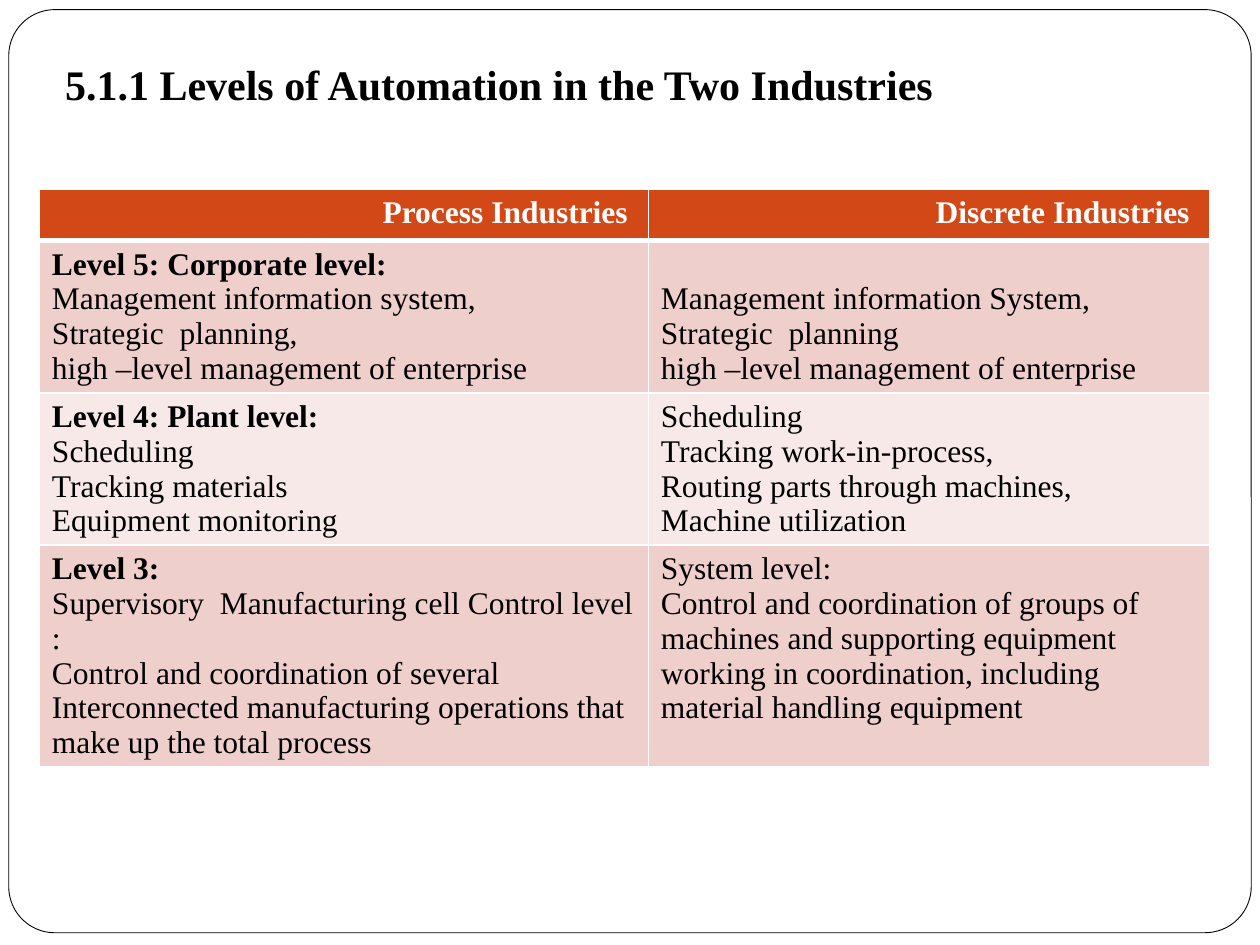
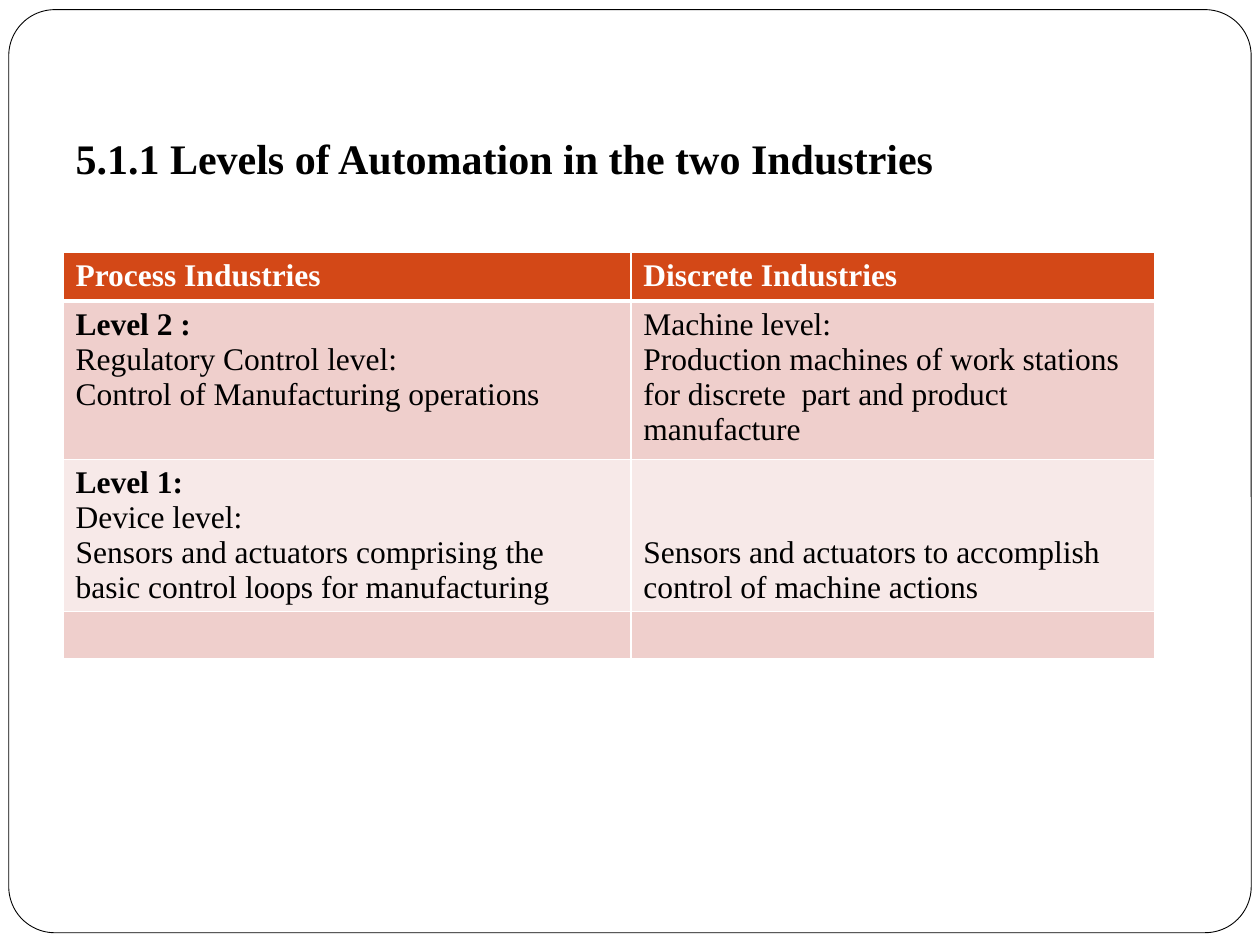
from lxml import etree
from pptx import Presentation
from pptx.dml.color import RGBColor
from pptx.enum import shapes, text
from pptx.oxml import ns
from pptx.util import Pt

COLORS = {
    "paper": "FFFFFF",
    "ink": "000000",
    "header": "D34817",
    "band_dark": "EFCFCC",
    "band_light": "F7E9E8",
}
FONT = "Times New Roman"
TITLE_SIZE = 24
TABLE_SIZE = 18
LINE_HEIGHT = 20
LEFT, RIGHT = text.PP_ALIGN.LEFT, text.PP_ALIGN.RIGHT


def color(name):
    return RGBColor.from_string(COLORS[name])


def write(paragraph, wording, size=TABLE_SIZE, ink="ink", bold=False, align=LEFT):
    paragraph.alignment = align
    run = paragraph.add_run()
    run.text = wording
    run.font.name = FONT
    run.font.size = Pt(size)
    run.font.bold = bold
    run.font.color.rgb = color(ink)


def set_borders(cell, top, bottom):
    """Draw white cell borders; top and bottom are widths in points."""
    properties = cell._tc.get_or_add_tcPr()
    for side, width in (("L", 1), ("R", 1), ("T", top), ("B", bottom)):
        line = etree.SubElement(properties, ns.qn(f"a:ln{side}"), w=str(Pt(width)))
        fill = etree.SubElement(line, ns.qn("a:solidFill"))
        etree.SubElement(fill, ns.qn("a:srgbClr"), val=COLORS["paper"])


class Deck:
    def __init__(self):
        self.presentation = Presentation()
        self.presentation.slide_width = Pt(720)
        self.presentation.slide_height = Pt(540)
        self.layout = self.presentation.slide_layouts[5]
        self.slide = None

    def add_slide(self):
        self.slide = self.presentation.slides.add_slide(self.layout)

    def add_master_frame(self):
        """Build the rounded frame on the current slide and move it to the master."""
        frame = self.slide.shapes.add_shape(
            shapes.MSO_SHAPE.ROUNDED_RECTANGLE, Pt(5), Pt(5.5), Pt(710), Pt(527.5))
        frame.adjustments[0] = 0.05
        frame.shadow.inherit = False
        frame.fill.solid()
        frame.fill.fore_color.rgb = color("paper")
        frame.line.color.rgb = color("ink")
        frame.line.width = Pt(0.5)
        self.presentation.slide_master.shapes.element.append(frame.element)

    def add_title(self, wording, left, top):
        title = self.slide.shapes.title
        title.left, title.top, title.width, title.height = (
            Pt(left), Pt(top), Pt(612), Pt(45.5))
        frame = title.text_frame
        frame.auto_size = text.MSO_AUTO_SIZE.NONE
        frame.vertical_anchor = text.MSO_ANCHOR.BOTTOM
        frame.margin_left = frame.margin_right = frame.margin_bottom = Pt(7.2)
        frame.margin_top = Pt(3.6)
        write(frame.paragraphs[0], wording, size=TITLE_SIZE, bold=True)

    def add_table(self, left, top, widths, heights, headers, rows, header_align=LEFT):
        """Each body cell is (bold heading, plain lines, lines skipped at the top)."""
        table = self.slide.shapes.add_table(
            len(heights), len(widths), Pt(left), Pt(top),
            Pt(sum(widths)), Pt(sum(heights))).table
        for column, width in zip(table.columns, widths):
            column.width = Pt(width)
        for row, height in zip(table.rows, heights):
            row.height = Pt(height)
        for column, header in enumerate(headers):
            cell = table.cell(0, column)
            self.style_cell(cell, "header", top=1, bottom=3)
            write(cell.text_frame.paragraphs[0], header, ink="paper", bold=True,
                  align=header_align)
        for row, contents in enumerate(rows, 1):
            band = "band_dark" if row % 2 else "band_light"
            for column, content in enumerate(contents):
                cell = table.cell(row, column)
                self.style_cell(cell, band, top=3 if row == 1 else 1, bottom=1)
                self.fill_cell(cell, *content)

    def style_cell(self, cell, fill, top, bottom):
        set_borders(cell, top, bottom)
        cell.fill.solid()
        cell.fill.fore_color.rgb = color(fill)

    def fill_cell(self, cell, heading, lines, skipped=0):
        wordings = ([heading] if heading else []) + lines
        if not wordings:
            cell.margin_top = cell.margin_bottom = 0
        else:
            cell.margin_top = Pt(3.6 + skipped * LINE_HEIGHT)
        for index, wording in enumerate(wordings):
            frame = cell.text_frame
            paragraph = frame.add_paragraph() if index else frame.paragraphs[0]
            write(paragraph, wording, bold=wording == heading)


UPPER_LEVELS = [
    [("Level 5: Corporate level:",
      ["Management information system,", "Strategic  planning,",
       "high –level management of enterprise"]),
     (None,
      ["Management information System,", "Strategic  planning",
       "high –level management of enterprise"], 1)],
    [("Level 4: Plant level:",
      ["Scheduling", "Tracking materials", "Equipment monitoring"]),
     (None,
      ["Scheduling", "Tracking work-in-process,",
       "Routing parts through machines,", "Machine utilization"])],
    [("Level 3:",
      ["Supervisory  Manufacturing cell Control level :",
       "Control and coordination of several",
       "Interconnected manufacturing operations that make up the total process"]),
     (None,
      ["System level:",
       "Control and coordination of groups of machines and supporting equipment "
       "working in coordination, including material handling equipment"])],
]
LOWER_LEVELS = [
    [("Level 2 :",
      ["Regulatory Control level:", "Control of Manufacturing operations"]),
     (None,
      ["Machine level:",
       "Production machines of work stations for discrete  part and product "
       "manufacture"])],
    [("Level 1:",
      ["Device level:", "Sensors and actuators comprising the",
       "basic control loops for manufacturing"]),
     (None,
      ["Sensors and actuators to accomplish", "control of machine actions"], 2)],
    [(None, []), (None, [])],
]


def main():
    deck = Deck()

    deck.add_slide()
    deck.add_master_frame()
    deck.add_title("5.1.1 Levels of Automation in the Two Industries", 30, 23.75)
    deck.add_table(22.5, 108, [348, 321], [29.5, 87, 87, 126.5],
                   ["Process Industries ", "Discrete Industries "],
                   UPPER_LEVELS, header_align=RIGHT)

    deck.add_slide()
    deck.add_title("5.1.1 Levels of Automation in the two Industries", 36, 66)
    deck.add_table(36, 144, [324.5, 299.5], [28, 90.5, 87, 27],
                   ["Process Industries", "Discrete Industries"], LOWER_LEVELS)

    deck.presentation.save("out.pptx")


if __name__ == "__main__":
    main()
